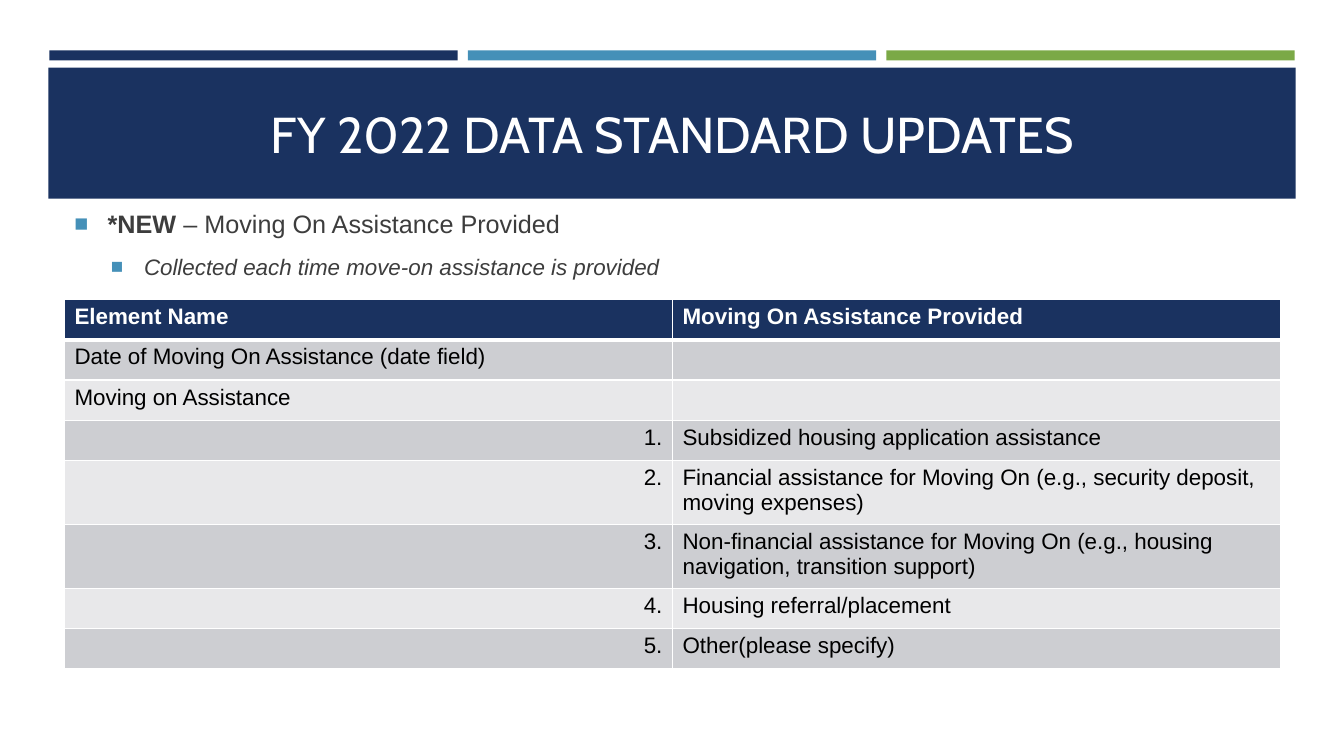
"""Build the FY 2022 data standard updates slide."""
from lxml import etree
from pptx import Presentation
from pptx.dml.color import RGBColor
from pptx.enum import shapes, text
from pptx.oxml import ns
from pptx.util import Inches, Pt

NAVY, BLUE, GREEN, WHITE = "1A3260", "4590B8", "7BA946", "FFFFFF"
GREY, BLACK = "3D3D3D", "000000"
BANDS = ["E8E8EA", "CDCED2"]


def color(value):
    """Return the colour for a hex string."""
    return RGBColor.from_string(value)


def write(paragraph, words, size=16, ink=BLACK, font="Arial", bold=False, italic=False,
          align=text.PP_ALIGN.LEFT):
    """Add a formatted run to a paragraph."""
    paragraph.alignment = align
    run = paragraph.add_run()
    run.text = words
    run.font.size = Pt(size)
    run.font.name = font
    run.font.bold = bold
    run.font.italic = italic
    run.font.color.rgb = color(ink)


presentation = Presentation()
presentation.slide_width = Inches(13.33)
presentation.slide_height = Inches(7.5)
slide = presentation.slides.add_slide(presentation.slide_layouts[6])

bars = [(0.49 + 4.15 * index, 0.5, 4.05, 0.1, fill)
        for index, fill in enumerate([NAVY, BLUE, GREEN])]
for left, top, width, height, fill in bars + [(0.48, 0.67, 12.37, 1.3, NAVY)]:
    shape = slide.shapes.add_shape(shapes.MSO_SHAPE.RECTANGLE, Inches(left), Inches(top),
                                   Inches(width), Inches(height))
    shape.shadow.inherit = False
    shape.fill.solid()
    shape.fill.fore_color.rgb = color(fill)
    shape.line.fill.background()

frames = []
for top, height in [(0.77, 1.11), (2.01, 0.82)]:
    box = slide.shapes.add_textbox(Inches(0.64), Inches(top), Inches(12.06), Inches(height))
    box.text_frame.word_wrap = True
    box.text_frame.vertical_anchor = text.MSO_ANCHOR.MIDDLE
    frames.append(box.text_frame)
title, body = frames

write(title.paragraphs[0], "FY 2022 DATA STANDARD UPDATES", size=36, ink=WHITE,
      font="Cabin", align=text.PP_ALIGN.CENTER)

heading, detail = body.paragraphs[0], body.add_paragraph()
write(heading, "*NEW ", size=18, ink=GREY, bold=True)
write(heading, "– Moving On Assistance Provided", size=18, ink=GREY)
write(detail, "Collected each time move-on assistance is provided", ink=GREY, italic=True)
detail.level = 1
detail.space_before = Pt(4)
for paragraph, indent in [(heading, 0.33), (detail, 0.69)]:
    paragraph.space_after = Pt(6)
    properties = paragraph._p.get_or_add_pPr()
    properties.set("marL", str(Inches(indent)))
    properties.set("indent", str(Inches(-0.33)))
    bullet_color = etree.SubElement(properties, ns.qn("a:buClr"))
    etree.SubElement(bullet_color, ns.qn("a:srgbClr"), val=BLUE)
    etree.SubElement(properties, ns.qn("a:buSzPct"), val="92000")
    etree.SubElement(properties, ns.qn("a:buFont"), typeface="Arial")
    etree.SubElement(properties, ns.qn("a:buChar"), char="■")

rows = [
    ("Element Name", "Moving On Assistance Provided", 0.4),
    ("Date of Moving On Assistance (date field)", "", 0.4),
    ("Moving on Assistance", "", 0.4),
    ("1.", "Subsidized housing application assistance", 0.4),
    ("2.", "Financial assistance for Moving On (e.g., security deposit, moving expenses)", 0.6),
    ("3.", "Non-financial assistance for Moving On (e.g., housing navigation, "
           "transition support)", 0.6),
    ("4.", "Housing referral/placement", 0.4),
    ("5.", "Other(please specify)", 0.4),
]
table = slide.shapes.add_table(len(rows), 2, Inches(0.64), Inches(2.97), Inches(12.06),
                               Inches(3.6)).table
for row, (*entries, height) in enumerate(rows):
    table.rows[row].height = Inches(height)
    for column, entry in enumerate(entries):
        cell = table.cell(row, column)
        properties = cell._tc.get_or_add_tcPr()
        for side in ["L", "R", "T", "B"]:
            thick = (row, side) in [(0, "B"), (1, "T")]
            border = etree.SubElement(properties, ns.qn(f"a:ln{side}"),
                                      w=str(Pt(3 if thick else 1)))
            border_fill = etree.SubElement(border, ns.qn("a:solidFill"))
            etree.SubElement(border_fill, ns.qn("a:srgbClr"), val=WHITE)
        cell.fill.solid()
        cell.fill.fore_color.rgb = color(NAVY if row == 0 else BANDS[row % 2])
        if entry:
            numbered = column == 0 and row > 2
            write(cell.text_frame.paragraphs[0], entry, ink=WHITE if row == 0 else BLACK,
                  bold=row == 0,
                  align=text.PP_ALIGN.RIGHT if numbered else text.PP_ALIGN.LEFT)

presentation.save("out.pptx")
